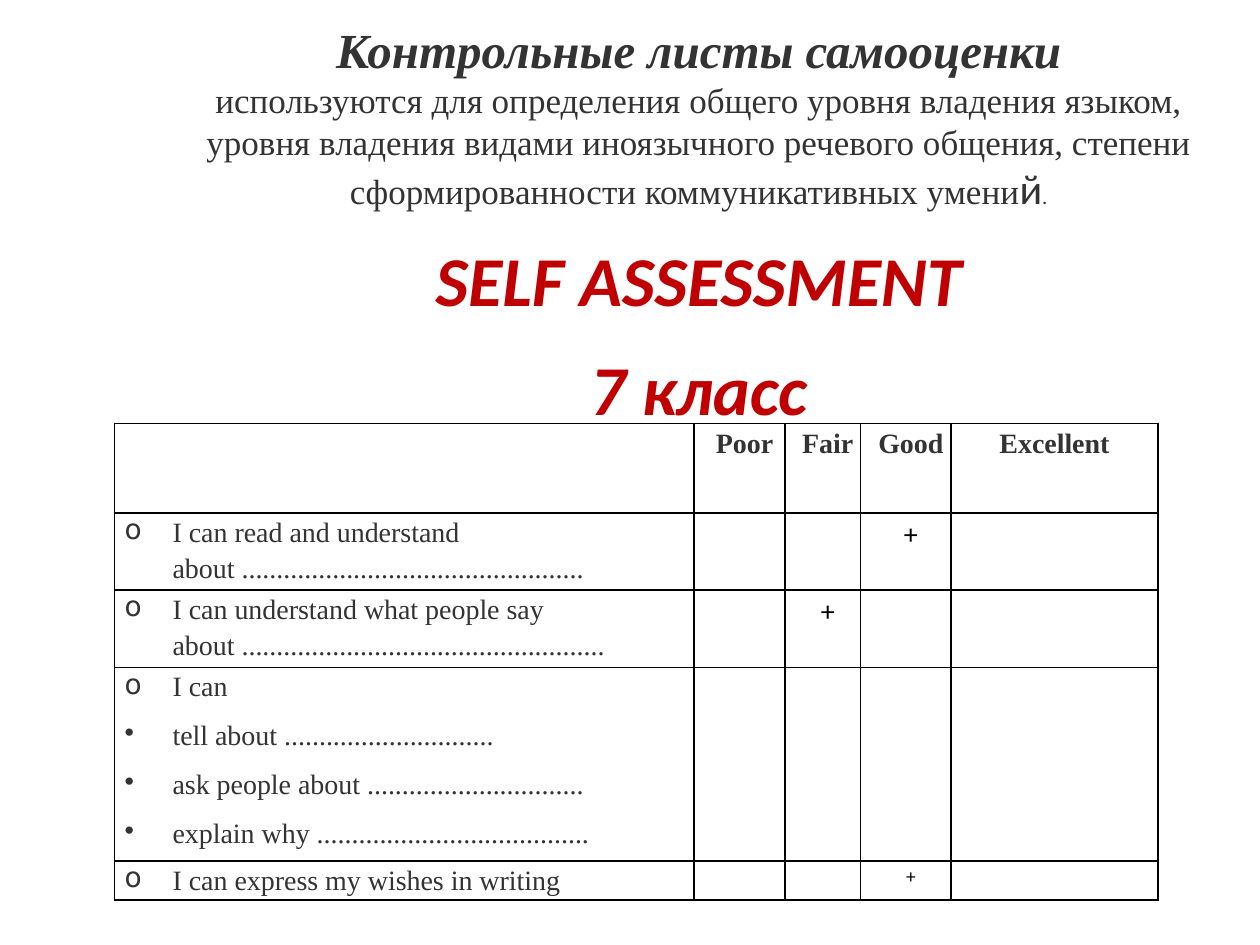
from lxml import etree
from pptx import Presentation, util as u
from pptx.dml.color import RGBColor
from pptx.enum import text
from pptx.oxml.ns import qn

COLORS = {"ink": "333333", "accent": "C00000", "black": "000000", "paper": "FFFFFF"}
SERIF, SANS = "Times New Roman", "Calibri"
CENTER = text.PP_ALIGN.CENTER


def write(paragraph, words, size=16, font=SERIF, color="ink", bold=False,
          italic=False, align=None, line=None, before=None, after=None, bullet=None):
    """Add a run to a paragraph and format both."""
    if align is not None:
        paragraph.alignment = align
    if line:
        paragraph.line_spacing = line
    if before is not None:
        paragraph.space_before = u.Pt(before)
    if after is not None:
        paragraph.space_after = u.Pt(after)
    if bullet:
        props = paragraph._p.get_or_add_pPr()
        props.set("marL", str(u.Inches(0.38)))
        props.set("indent", str(-u.Inches(0.38)))
        etree.SubElement(props, qn("a:buChar")).set("char", bullet)
    run = paragraph.add_run()
    run.text = words
    run.font.size, run.font.name = u.Pt(size), font
    run.font.bold, run.font.italic = bold, italic
    run.font.color.rgb = RGBColor.from_string(COLORS[color])


def outline(cell):
    """Draw a 1 pt black border on every side of a cell."""
    props = cell._tc.get_or_add_tcPr()
    for index, side in enumerate(("lnL", "lnR", "lnT", "lnB")):
        border = etree.Element(qn("a:" + side), w=str(u.Pt(1)))
        fill = etree.SubElement(border, qn("a:solidFill"))
        etree.SubElement(fill, qn("a:srgbClr")).set("val", COLORS["black"])
        props.insert(index, border)


deck = Presentation()
deck.slide_width, deck.slide_height = u.Inches(10), u.Inches(7.5)
slide = deck.slides.add_slide(deck.slide_layouts[5])

# Self-assessment checklist: (bullet, line) pairs and the column that is ticked
grades = ["Poor", "Fair", "Good", "Excellent"]
skills = [
    ([("o", "I can read and understand about " + "." * 49)], "Good", 16),
    ([("o", "I can understand what people say about " + "." * 52)], "Fair", 16),
    ([("o", "I can"),
      ("•", "tell about " + "." * 30),
      ("•", "ask people about " + "." * 31),
      ("•", "explain why " + "." * 39)], None, 16),
    ([("o", "I can express my wishes in writing")], "Good", 11),
]
widths = [4.6, 0.72, 0.6, 0.72, 1.64]
heights = [0.71, 0.57, 0.57, 1.45, 0.29]
checklist = slide.shapes.add_table(
    len(heights), len(widths), u.Inches(0.91), u.Inches(3.36),
    u.Inches(sum(widths)), u.Inches(sum(heights))).table
for column, width in zip(checklist.columns, widths):
    column.width = u.Inches(width)
for row, height in zip(checklist.rows, heights):
    row.height = u.Inches(height)

for cell in checklist.iter_cells():
    cell.margin_left = u.Inches(0.08)
    cell.margin_right = cell.margin_top = cell.margin_bottom = 0
    cell.fill.solid()
    cell.fill.fore_color.rgb = RGBColor.from_string(COLORS["paper"])
    outline(cell)
    cell.text_frame.paragraphs[0].font.size = u.Pt(11)

# Grade headings
for column, grade in enumerate(grades, start=1):
    write(checklist.cell(0, column).text_frame.paragraphs[0], grade,
          bold=True, align=CENTER, line=1.15, after=7.5)
checklist.cell(0, len(grades)).margin_right = u.Inches(0.08)

# Skills and ticks
for row, (lines, grade, tick_size) in enumerate(skills, start=1):
    frame = checklist.cell(row, 0).text_frame
    for index, (bullet, words) in enumerate(lines):
        paragraph = frame.add_paragraph() if index else frame.paragraphs[0]
        write(paragraph, words, line=1.15, after=7.5, bullet=bullet)
    if grade:
        tick = checklist.cell(row, 1 + grades.index(grade)).text_frame.paragraphs[0]
        write(tick, "+", size=tick_size, font=SANS, color="black", align=CENTER, line=1.15)

# Heading above the checklist
heading = slide.shapes.title
heading.left, heading.top = u.Inches(1.3), u.Inches(0.08)
heading.width, heading.height = u.Inches(8.49), u.Inches(3.4)
frame = heading.text_frame
frame.word_wrap = True
frame.auto_size = text.MSO_AUTO_SIZE.SHAPE_TO_FIT_TEXT
frame.vertical_anchor = text.MSO_ANCHOR.MIDDLE

write(frame.paragraphs[0], "Контрольные листы самооценки", size=28,
      bold=True, italic=True, align=CENTER)
purpose = frame.add_paragraph()
write(purpose, "используются для определения общего уровня владения языком, "
      "уровня владения видами иноязычного речевого общения, степени "
      "сформированности коммуникативных умени", size=20, align=CENTER)
write(purpose, "й", size=24, font=SANS)
write(purpose, ".", size=12, font=SANS)
for words in ("SELF ASSESSMENT", "7 класс"):
    write(frame.add_paragraph(), words, size=40, font=SANS, color="accent",
          bold=True, italic=True, align=CENTER, before=14)

deck.save("out.pptx")
